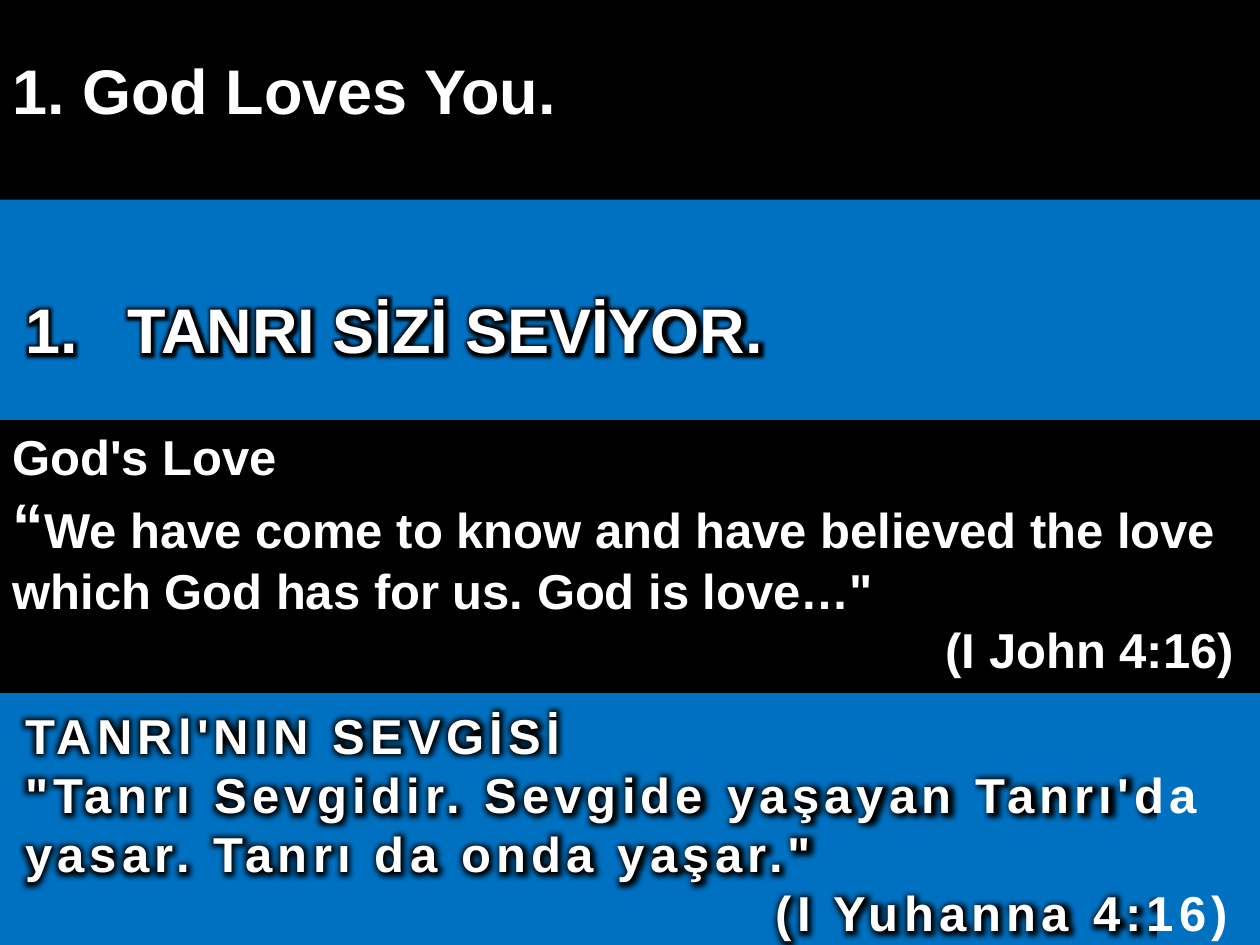
from dataclasses import dataclass

from lxml import etree
from pptx import Presentation
from pptx.dml.color import RGBColor
from pptx.enum.shapes import MSO_SHAPE
from pptx.enum.text import MSO_ANCHOR, MSO_AUTO_SIZE, PP_ALIGN
from pptx.oxml.ns import qn
from pptx.util import Pt

RECTANGLE = MSO_SHAPE.RECTANGLE
TOP, MIDDLE = MSO_ANCHOR.TOP, MSO_ANCHOR.MIDDLE
LEFT, RIGHT = PP_ALIGN.LEFT, PP_ALIGN.RIGHT
NO_AUTOFIT = MSO_AUTO_SIZE.NONE
TITLE_AND_CONTENT = 1


@dataclass(frozen=True)
class Theme:
    black: RGBColor = RGBColor(0x00, 0x00, 0x00)
    blue: RGBColor = RGBColor(0x00, 0x70, 0xC0)
    white: RGBColor = RGBColor(0xFF, 0xFF, 0xFF)
    font: str = "Arial"
    heading_size: int = 36
    verse_size: int = 28
    glow_radius: int = 10


THEME = Theme()
SLIDE_WIDTH, SLIDE_HEIGHT = 720, 540


@dataclass(frozen=True)
class Band:
    """A full-width strip of the slide, in points."""
    top: float
    height: float
    left_inset: float = 7.2
    vertical_inset: float = 3.6
    anchor: MSO_ANCHOR = TOP


ENGLISH_HEADING = Band(0, 102, anchor=MIDDLE)
TURKISH_HEADING = Band(114, 126, 14.4, 7.2, MIDDLE)
ENGLISH_VERSE = Band(240, 114)
TURKISH_VERSE = Band(396, 146, 14.4, 7.2)


def place(shape, band: Band) -> None:
    shape.left, shape.top = Pt(0), Pt(band.top)
    shape.width, shape.height = Pt(SLIDE_WIDTH), Pt(band.height)
    frame = shape.text_frame
    frame.word_wrap = True
    frame.auto_size = NO_AUTOFIT
    frame.vertical_anchor = band.anchor
    frame.margin_left, frame.margin_right = Pt(band.left_inset), Pt(7.2)
    frame.margin_top = frame.margin_bottom = Pt(band.vertical_inset)


def add_blue_band(slide, band: Band):
    shape = slide.shapes.add_shape(RECTANGLE, 0, 0, 0, 0)
    place(shape, band)
    shape.shadow.inherit = False
    shape.fill.solid()
    shape.fill.fore_color.rgb = THEME.blue
    shape.line.fill.background()
    return shape


def add_glow(run) -> None:
    effects = etree.Element(qn("a:effectLst"))
    glow = etree.SubElement(effects, qn("a:glow"), rad=str(Pt(THEME.glow_radius)))
    etree.SubElement(glow, qn("a:srgbClr"), val=str(THEME.black))
    run.font.fill._xPr.find(qn("a:solidFill")).addnext(effects)


def write(paragraph, text: str, *, size: int = THEME.verse_size, glow: bool = False,
          tracking: float = 0, align: PP_ALIGN = LEFT,
          line_spacing: float = 1.0) -> None:
    """Append text to the paragraph; each newline becomes a line break."""
    paragraph.alignment = align
    paragraph.line_spacing = line_spacing
    paragraph.space_before = Pt(0)
    for index, line in enumerate(text.split("\n")):
        if index:
            paragraph.add_line_break()
        if not line:
            continue
        run = paragraph.add_run()
        run.text = line
        font = run.font
        font.name, font.size, font.bold = THEME.font, Pt(size), True
        font.color.rgb = THEME.white
        if tracking:
            run._r.get_or_add_rPr().set("spc", str(round(tracking * 100)))
        if glow:
            add_glow(run)


def set_bullet(paragraph, tag: str, indent: float = 0, **attributes: str) -> None:
    properties = paragraph._p.get_or_add_pPr()
    properties.set("marL", str(Pt(indent)))
    properties.set("indent", str(Pt(-indent)))
    etree.SubElement(properties, qn(tag), **attributes)


def main() -> None:
    deck = Presentation()
    deck.slide_width, deck.slide_height = Pt(SLIDE_WIDTH), Pt(SLIDE_HEIGHT)
    slide = deck.slides.add_slide(deck.slide_layouts[TITLE_AND_CONTENT])
    slide.background.fill.solid()
    slide.background.fill.fore_color.rgb = THEME.black

    english_heading = slide.shapes.title
    place(english_heading, ENGLISH_HEADING)
    write(english_heading.text_frame.paragraphs[0], "1. God Loves You.",
          size=THEME.heading_size)

    turkish_heading = add_blue_band(slide, TURKISH_HEADING).text_frame.paragraphs[0]
    write(turkish_heading, "TANRI SİZİ SEVİYOR.", size=THEME.heading_size,
          glow=True, line_spacing=1.5)
    set_bullet(turkish_heading, "a:buFont", 58.5, typeface="+mj-lt")
    set_bullet(turkish_heading, "a:buAutoNum", 58.5, type="arabicPeriod")

    english_body = slide.placeholders[1]
    place(english_body, ENGLISH_VERSE)
    english_verse = english_body.text_frame.paragraphs[0]
    write(english_verse, "God's Love \n")
    write(english_verse, "“", size=THEME.heading_size)
    write(english_verse, "We have come to know and have believed the love "
                         "which God has for us. God is love…\"")
    english_reference = english_body.text_frame.add_paragraph()
    write(english_reference, "(I John 4:16) ", align=RIGHT)
    for paragraph in (english_verse, english_reference):
        set_bullet(paragraph, "a:buNone")

    turkish_body = add_blue_band(slide, TURKISH_VERSE).text_frame
    write(turkish_body.paragraphs[0],
          "TANRl'NIN SEVGİSİ \n\"Tanrı Sevgidir. Sevgide yaşayan Tanrı'da yasar. "
          "Tanrı da onda yaşar.\"", glow=True, tracking=3)
    write(turkish_body.add_paragraph(), "(I Yuhanna 4:16) ",
          glow=True, tracking=3, align=RIGHT)

    deck.save("out.pptx")


if __name__ == "__main__":
    main()
